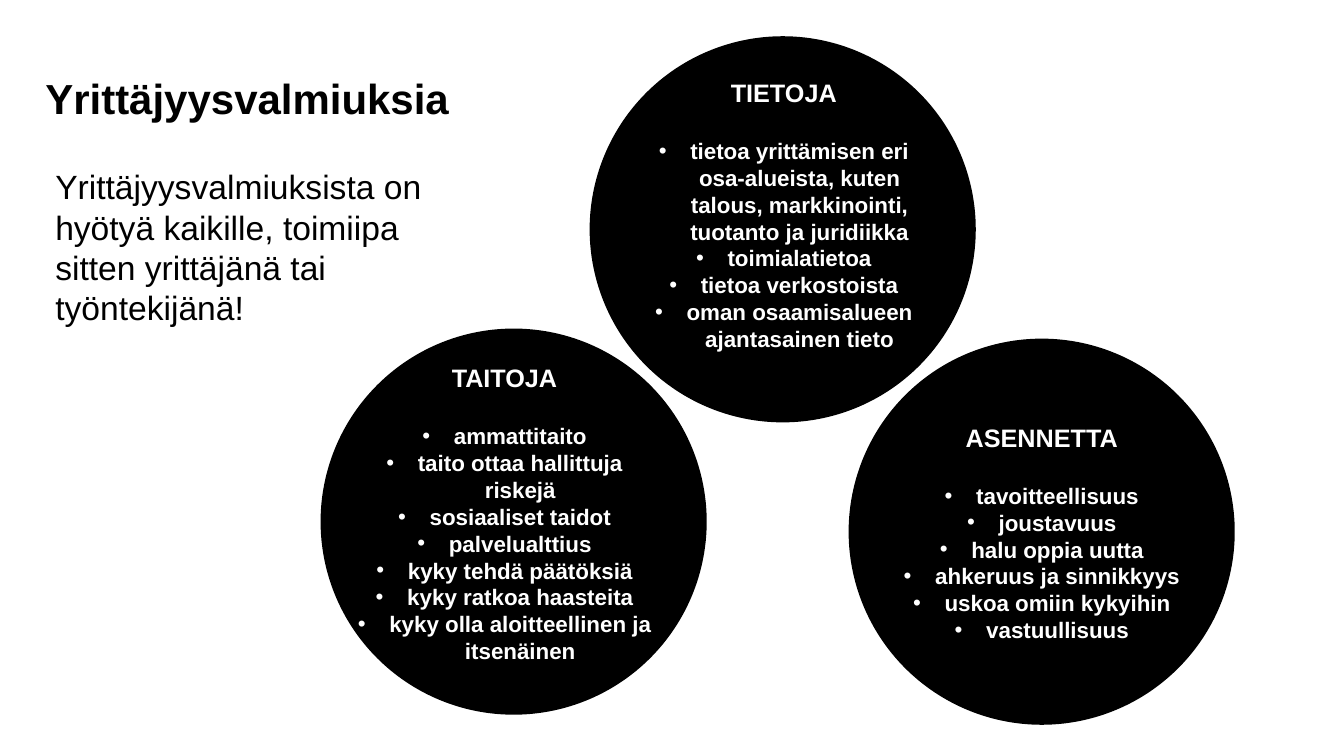
"""Build a slide on entrepreneurial skills with three circles of bullet points."""
from lxml.etree import SubElement
from pptx import Presentation
from pptx.dml.color import RGBColor
from pptx.enum.shapes import MSO_SHAPE
from pptx.enum.text import MSO_ANCHOR, PP_ALIGN
from pptx.oxml.ns import qn
from pptx.util import Pt

COLORS = {"black": "000000", "white": "FFFFFF"}
DIAMETER = 275.8
TEXT_WIDTH = 229.7
INDENT = 22.5

CIRCLES = [
    ("TIETOJA", (421.2, 25.9), (445, 51.8), 225.4, [
        "tietoa yrittämisen eri osa-alueista, kuten talous, markkinointi, tuotanto ja juridiikka",
        "toimialatietoa",
        "tietoa verkostoista",
        "oman osaamisalueen ajantasainen tieto",
    ]),
    ("TAITOJA", (229, 234.7), (245.5, 255.6), 225.4, [
        "ammattitaito",
        "taito ottaa hallittuja riskejä",
        "sosiaaliset taidot",
        "palvelualttius",
        "kyky tehdä päätöksiä",
        "kyky ratkoa haasteita",
        "kyky olla aloitteellinen ja itsenäinen",
    ]),
    ("ASENNETTA", (606.2, 241.9), (629.3, 298.1), 186.5, [
        "tavoitteellisuus",
        "joustavuus",
        "halu oppia uutta",
        "ahkeruus ja sinnikkyys",
        "uskoa omiin kykyihin",
        "vastuullisuus",
    ]),
]

presentation = Presentation()
presentation.slide_width = Pt(960)
presentation.slide_height = Pt(540)
slide = presentation.slides.add_slide(presentation.slide_layouts[6])


def add_text_frame(left, top, width, height):
    text_frame = slide.shapes.add_textbox(Pt(left), Pt(top), Pt(width), Pt(height)).text_frame
    text_frame.word_wrap = True
    return text_frame


def write(paragraph, text, size, color, bold):
    paragraph.text = text
    font = paragraph.font
    font.name = "Arial"
    font.size = Pt(size)
    font.bold = bold
    font.color.rgb = RGBColor.from_string(COLORS[color])


title_frame = add_text_frame(32.4, 0, 719.3, 87.8)
title_frame.margin_left = title_frame.margin_right = 0
title_frame.margin_top = title_frame.margin_bottom = 0
title_frame.vertical_anchor = MSO_ANCHOR.BOTTOM
write(title_frame.paragraphs[0], "Yrittäjyysvalmiuksia", 30, "black", True)

for heading, (left, top), (text_left, text_top), text_height, points in CIRCLES:
    circle = slide.shapes.add_shape(
        MSO_SHAPE.OVAL, Pt(left), Pt(top), Pt(DIAMETER), Pt(DIAMETER))
    circle.shadow.inherit = False
    circle.fill.solid()
    circle.fill.fore_color.rgb = RGBColor.from_string(COLORS["black"])
    circle.line.fill.background()

    text_frame = add_text_frame(text_left, text_top, TEXT_WIDTH, text_height)
    paragraph = text_frame.paragraphs[0]
    paragraph.alignment = PP_ALIGN.CENTER
    paragraph.space_after = Pt(21)
    write(paragraph, heading, 18, "white", True)
    for point in points:
        paragraph = text_frame.add_paragraph()
        paragraph.alignment = PP_ALIGN.CENTER
        properties = paragraph._p.get_or_add_pPr()
        properties.set("marL", str(Pt(INDENT)))
        properties.set("indent", str(-Pt(INDENT)))
        SubElement(properties, qn("a:buFont"), typeface="Arial")
        SubElement(properties, qn("a:buChar"), char="•")
        write(paragraph, point, 16, "white", True)

intro_frame = add_text_frame(32.4, 115.2, 288.7, 152.6)
write(
    intro_frame.paragraphs[0],
    "Yrittäjyysvalmiuksista on hyötyä kaikille, toimiipa sitten yrittäjänä tai työntekijänä!",
    24, "black", False)

presentation.save("out.pptx")
